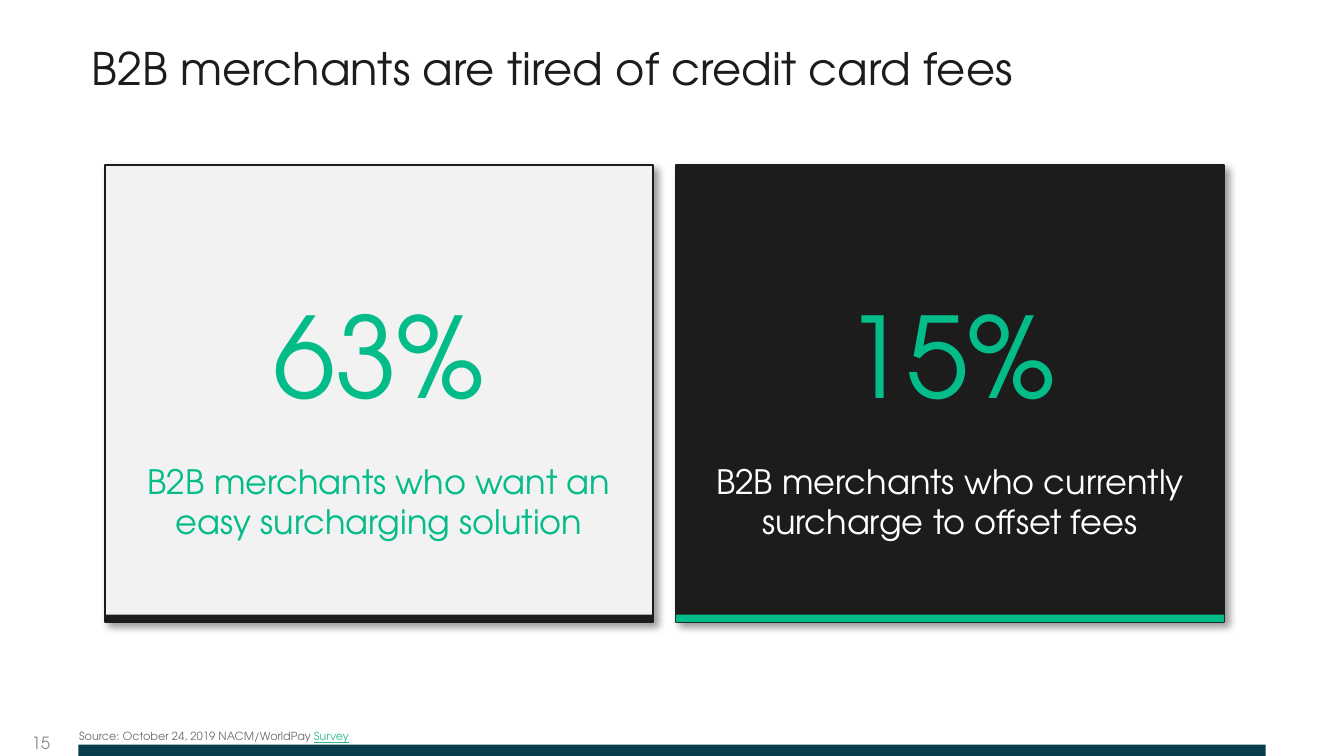
from lxml.etree import SubElement
from pptx import Presentation
from pptx.dml.color import RGBColor
from pptx.enum.shapes import MSO_SHAPE as SHAPE
from pptx.enum.text import MSO_ANCHOR as ANCHOR, MSO_AUTO_SIZE as AUTO, PP_ALIGN as ALIGN
from pptx.oxml.ns import qn
from pptx.util import Pt

FONT = "TeX Gyre Adventor"
INK, GREEN, PALE, WHITE = "1B1C1B", "04BC89", "F2F2F2", "FFFFFF"


def rgb(color):
    """Turn a hex string into a colour."""
    return RGBColor.from_string(color)


def style(r, size, color):
    """Format one run."""
    r.font.name = FONT
    r.font.size = Pt(size)
    r.font.color.rgb = rgb(color)


def add_rect(s, x, y, w, h, fill):
    """Add a plain filled rectangle."""
    sp = s.shapes.add_shape(SHAPE.RECTANGLE, Pt(x), Pt(y), Pt(w), Pt(h))
    sp.shadow.inherit = False
    sp.fill.solid()
    sp.fill.fore_color.rgb = rgb(fill)
    sp.line.fill.background()
    return sp


def add_shadow(sp):
    """Give a shape a soft shadow to the lower right."""
    effects = sp._element.spPr.find(qn("a:effectLst"))
    shadow = SubElement(effects, qn("a:outerShdw"), blurRad=str(Pt(4)), dist=str(Pt(3)),
                        dir="2700000", algn="tl", rotWithShape="0")
    color = SubElement(shadow, qn("a:srgbClr"), val="000000")
    SubElement(color, qn("a:alpha"), val="40000")


def add_title(s, x, y, w, h, text):
    """Place and format the title placeholder."""
    sp = s.shapes.title
    sp.left, sp.top, sp.width, sp.height = Pt(x), Pt(y), Pt(w), Pt(h)
    tf = sp.text_frame
    tf.text = text
    tf.vertical_anchor = ANCHOR.TOP
    tf.auto_size = AUTO.NONE
    p = tf.paragraphs[0]
    p.alignment = ALIGN.LEFT
    p.line_spacing = 0.9
    style(p.runs[0], 24, INK)


def add_card(s, x, y, w, h, figure, caption, fill, caption_color, bar_color):
    """Add a card with a large figure, its caption and a bar at the foot."""
    sp = add_rect(s, x, y, w, h, fill)
    sp.line.color.rgb = rgb(INK)
    sp.line.width = Pt(1)
    add_shadow(sp)
    tf = sp.text_frame
    tf.word_wrap = True
    tf.vertical_anchor = ANCHOR.MIDDLE
    tf.margin_top = Pt(25)
    tf.text = f"{figure}\n{caption}"
    for p, size, color in zip(tf.paragraphs, (60, 18), (GREEN, caption_color)):
        p.alignment = ALIGN.CENTER
        style(p.runs[0], size, color)
    tf.paragraphs[1].space_before = Pt(21.5)
    bar_h = 4
    add_rect(s, x, y + h - bar_h, w, bar_h, bar_color)


def add_footer(s, x, y, w, h, number):
    """Add the band, the source note and the slide number."""
    add_rect(s, x + 42, y + h - 6, 636, 6, "093D4E")
    tf = s.shapes.add_textbox(Pt(x + 35.3), Pt(y), Pt(250), Pt(14.4)).text_frame
    tf.word_wrap = True
    p = tf.paragraphs[0]
    p.text = "Source: October 24, 2019 NACM/WorldPay "
    style(p.runs[0], 6, "6C6C68")
    r = p.add_run()
    r.text = "Survey"
    style(r, 6, "30BC89")
    r.font.underline = True
    tf = s.shapes.add_textbox(Pt(x), Pt(y), Pt(44), Pt(21.6)).text_frame
    tf.word_wrap = True
    tf.vertical_anchor = ANCHOR.MIDDLE
    tf.text = number
    p = tf.paragraphs[0]
    p.alignment = ALIGN.CENTER
    style(p.runs[0], 9, "8D8D8D")


def main():
    """Build and save the slide."""
    prs = Presentation()
    prs.slide_width, prs.slide_height = Pt(720), Pt(405)
    s = prs.slides.add_slide(prs.slide_layouts[5])
    add_title(s, 42, 21.6, 636, 58.3, "B2B merchants are tired of credit card fees")
    add_footer(s, 0, 387.4, 720, 17.6, "15")
    cards = [
        ("63%", "B2B merchants who want an easy surcharging solution", PALE, GREEN, INK),
        ("15%", "B2B merchants who currently surcharge to offset fees", INK, WHITE, GREEN),
    ]
    card_w, gap = 293.8, 12
    for i, card in enumerate(cards):
        add_card(s, 56.2 + i * (card_w + gap), 88.5, card_w, 244.8, *card)
    prs.save("out.pptx")


if __name__ == "__main__":
    main()
